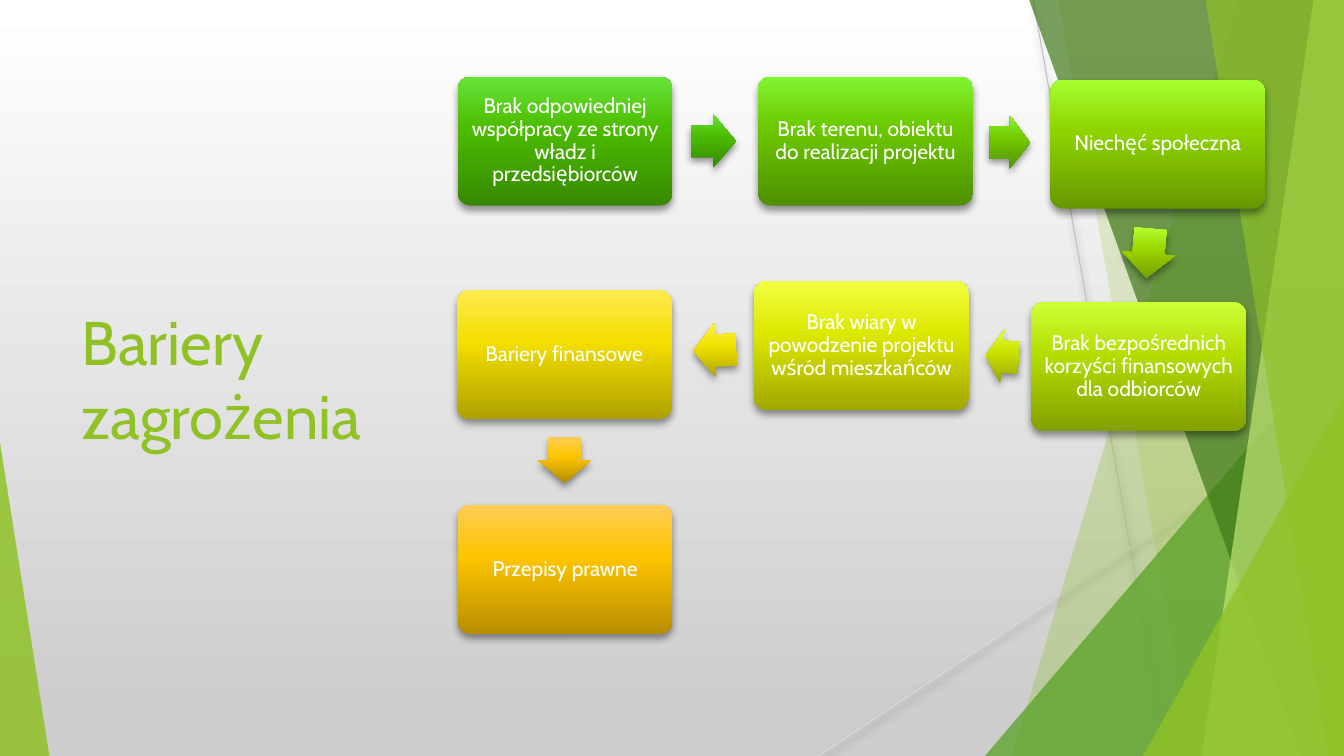
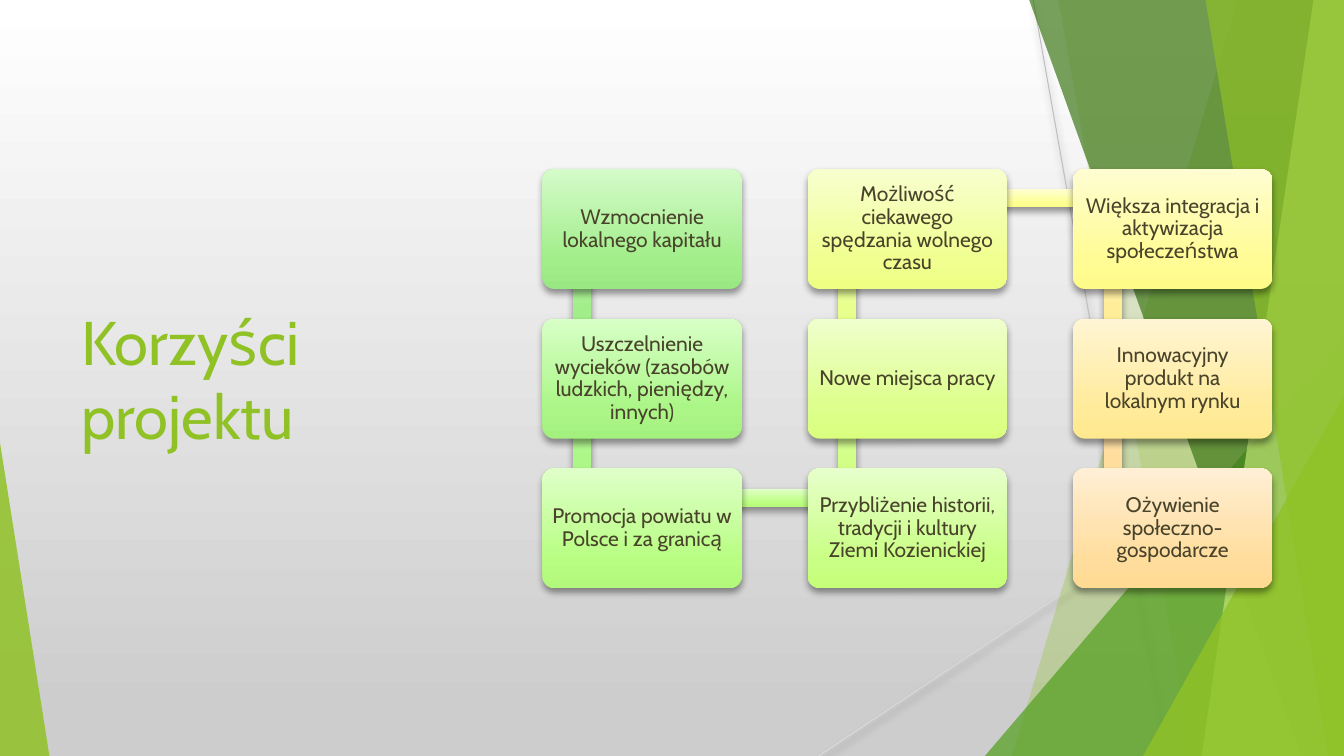
from dataclasses import dataclass
from itertools import pairwise
from math import atan2, cos, degrees, sin

from lxml.etree import SubElement
from pptx import Presentation
from pptx.dml.color import RGBColor as RGB
from pptx.enum.shapes import MSO_CONNECTOR as LINE, MSO_SHAPE as SHAPE
from pptx.enum.text import MSO_ANCHOR as ANCHOR, PP_ALIGN as ALIGN
from pptx.oxml.ns import qn
from pptx.util import Inches, Pt

W, H = Inches(13.333), Inches(7.5)


@dataclass(frozen=True)
class Theme:
    font: str = "Cabin"
    title_size: int = 44
    body_size: int = 15
    lime: str = "90C226"
    green: str = "54A021"
    forest: str = "3F7819"
    pale: str = "C0E474"
    white: str = "FFFFFF"
    brown: str = "48432A"
    silver: str = "CDCDCD"
    line_dark: str = "BFBFBF"
    line_light: str = "D9D9D9"
    shadow: str = "000000"
    deep_stops: tuple = (0, 60, 100)
    soft_stops: tuple = (0, 25, 100)


T = Theme()

BARRIERS = [
    ("Brak odpowiedniej współpracy ze strony władz i przedsiębiorców",
     34.05, 10.13, "378800 4CBC01 66E438"),
    ("Brak terenu, obiektu do realizacji projektu",
     56.4, 10.13, "4E9000 6CC800 81F431"),
    ("Niechęć społeczna", 78.15, 10.53, "679800 8ED300 A6FF2F"),
    ("Brak bezpośrednich korzyści finansowych dla odbiorców",
     76.73, 40, "82A000 B4DE00 CDFF39"),
    ("Brak wiary w powodzenie projektu wśród mieszkańców",
     56.1, 37.2, "A0A800 DDE800 F2FF43"),
    ("Bariery finansowe", 33.98, 38.4, "B0A000 F3DE00 FFEA4E"),
    ("Przepisy prawne", 34.05, 66.8, "B88E00 FEC500 FFCD56"),
]
ARROW_COLORS = [
    "378800 4CBC01 66E438", "539200 72CA00 87F730", "729B00 9DD700 B6FF33",
    "94A500 CCE400 E4FF3F", "AEA400 F1E300 FFF04C", "B88E00 FEC500 FFCD56",
]

BENEFITS = [
    ("Wzmocnienie lokalnego kapitału", "9AE883 A2EE8B D4FBC9"),
    ("Uszczelnienie wycieków (zasobów ludzkich, pieniędzy, innych)",
     "A4F07F ABF687 D8FFC7"),
    ("Promocja powiatu w Polsce i za granicą", "B2F87B B8FE83 DFFFC9"),
    ("Przybliżenie historii, tradycji i kultury Ziemi Kozienickiej",
     "C5FF79 CAFF86 E7FFCB"),
    ("Nowe miejsca pracy", "DAFF7E DDFF8B EFFFCD"),
    ("Możliwość ciekawego spędzania wolnego czasu", "EEFF84 F0FF90 F8FFCF"),
    ("Większa integracja i aktywizacja społeczeństwa",
     "FFFB89 FFFC95 FFFDD1"),
    ("Innowacyjny produkt na lokalnym rynku", "FFE98F FFEB9A FFF5D4"),
    ("Ożywienie społeczno-gospodarcze", "FFDA93 FFDD9D FFEFD5"),
]
BAR_COLORS = [
    "9AE883 A2EE8B D4FBC9", "A6F17F ACF787 D9FFC7", "B7FB7A BDFF83 E1FFC9",
    "CEFF7C D2FF88 EAFFCC", "E6FF81 E8FF8E F4FFCE", "FDFF88 FDFF93 FEFFD0",
    "FFEC8E FFED99 FFF7D3", "FFDA93 FFDD9D FFEFD5",
]


def x(share):
    return int(W * share / 100)


def y(share):
    return int(H * share / 100)


def area(left, top, width, height):
    return x(left), y(top), x(width), y(height)


def gradient(fill, root, colors, stops, angle):
    fill.gradient()
    fill.gradient_angle = angle
    grad = next(root.iter(qn("a:gradFill")))
    grad.set("rotWithShape", "0")
    gs_list = grad.find(qn("a:gsLst"))
    for gs in list(gs_list):
        gs_list.remove(gs)
    for color, stop in zip(colors, stops):
        gs = SubElement(gs_list, qn("a:gs"), pos=str(stop * 1000))
        SubElement(gs, qn("a:srgbClr"), val=color)


def drop_shadow(sp):
    spPr = sp.element.spPr
    effects = spPr.find(qn("a:effectLst"))
    if effects is None:
        effects = SubElement(spPr, qn("a:effectLst"))
    shadow = SubElement(effects, qn("a:outerShdw"), blurRad=str(Pt(5.2)),
                        dist=str(Pt(3)), dir="5400000", rotWithShape="0")
    color = SubElement(shadow, qn("a:srgbClr"), val=T.shadow)
    SubElement(color, qn("a:alpha"), val="40000")


def tint(sp, color, opacity):
    sp.fill.solid()
    sp.fill.fore_color.rgb = RGB.from_string(color)
    clr = next(sp.element.spPr.iter(qn("a:srgbClr")))
    SubElement(clr, qn("a:alpha"), val=str(opacity * 1000))
    sp.line.fill.background()
    sp.shadow.inherit = False


def glossy(s, kind, box, colors, stops, adjust=()):
    sp = s.shapes.add_shape(kind, *box)
    for i, value in enumerate(adjust):
        sp.adjustments[i] = value
    gradient(sp.fill, sp.element, colors.split(), stops, 90)
    sp.line.fill.background()
    sp.shadow.inherit = False
    drop_shadow(sp)
    return sp


def write(sp, text, size, color, align):
    tf = sp.text_frame
    tf.word_wrap = True
    tf.vertical_anchor = ANCHOR.MIDDLE
    p = tf.paragraphs[0]
    p.text = text
    p.alignment = align
    p.font.name = T.font
    p.font.size = Pt(size)
    p.font.color.rgb = RGB.from_string(color)
    return tf


def card(s, box, text, colors, stops, color):
    sp = glossy(s, SHAPE.ROUNDED_RECTANGLE, box, colors, stops, [0.1])
    tf = write(sp, text, T.body_size, color, ALIGN.CENTER)
    tf.margin_left = tf.margin_right = Inches(0.06)
    tf.margin_top = tf.margin_bottom = Inches(0.06)
    tf.paragraphs[0].line_spacing = 0.9


def title(s, text):
    sp = s.shapes.add_textbox(*area(5.33, 20.13, 29.1, 59.73))
    write(sp, text, T.title_size, T.lime, ALIGN.LEFT)


def hairline(s, start, end, color):
    ln = s.shapes.add_connector(LINE.STRAIGHT, x(start[0]), y(start[1]),
                                x(end[0]), y(end[1]))
    ln.line.color.rgb = RGB.from_string(color)
    ln.line.width = Pt(0.75)
    drop_shadow(ln)


def pane(s, top_left, bottom_left, color, opacity):
    fb = s.shapes.build_freeform(x(top_left), 0)
    fb.add_line_segments([(W, 0), (W, H), (x(bottom_left), H)])
    tint(fb.convert_to_shape(), color, opacity)


def wedge(s, left, top, width, apex, color, opacity):
    sp = s.shapes.add_shape(SHAPE.ISOSCELES_TRIANGLE,
                            *area(left, top, width, 100 - top))
    sp.adjustments[0] = apex
    tint(sp, color, opacity)


def backdrop(s):
    hairline(s, (76.88, 0), (86.85, 100), T.line_dark)
    hairline(s, (100, 53.73), (60.9, 100), T.line_light)
    pane(s, 92.1, 75.3, T.lime, 30)
    pane(s, 78.75, 88.73, T.lime, 20)
    wedge(s, 73.28, 44.4, 26.72, 1, T.green, 72)
    pane(s, 76.58, 96.83, T.forest, 70)
    pane(s, 97.73, 89.4, T.pale, 70)
    pane(s, 89.7, 98.85, T.lime, 65)
    wedge(s, 85.05, 52.4, 14.95, 1, T.lime, 80)
    wedge(s, 0, 58.53, 3.68, 0, T.lime, 85)


def dress_layout(layout, s):
    for ph in list(layout.placeholders):
        ph.element.getparent().remove(ph.element)
    gradient(layout.background.fill, layout.element,
             (T.white, T.silver), (0, 94), 270)
    backdrop(s)
    for sp in list(s.shapes):
        layout.shapes.element.append(sp.element)


def arrow(s, start, end, colors):
    left, top, width, height = start
    dx, dy = end[0] - left, end[1] - top
    turn = atan2(dy, dx)
    length = 0.53 * max(abs(dx) - width, abs(dy) - height)
    thick, pull = Inches(0.53), Inches(0.02)
    cx = left + (width + dx) / 2 - pull * cos(turn)
    cy = top + (height + dy) / 2 - pull * sin(turn)
    box = [int(v) for v in (cx - length / 2, cy - thick / 2, length, thick)]
    sp = glossy(s, SHAPE.RIGHT_ARROW, box, colors, T.deep_stops, [0.6, 0.5])
    sp.rotation = degrees(turn) % 360


def barriers(s):
    title(s, "Bariery zagrożenia")
    boxes = [area(left, top, 16, 17.07) for _, left, top, _ in BARRIERS]
    for box, (text, _, _, colors) in zip(boxes, BARRIERS):
        card(s, box, text, colors, T.deep_stops, T.white)
    for (start, end), colors in zip(pairwise(boxes), ARROW_COLORS):
        arrow(s, start, end, colors)


def snake(i, rows=3):
    col, step = divmod(i, rows)
    row = rows - 1 - step if col % 2 else step
    return 40.35 + 19.74 * col, 22.35 + 19.8 * row


def benefits(s):
    title(s, "Korzyści projektu")
    cells = [snake(i) for i in range(len(BENEFITS))]
    for ((left, top), (next_left, next_top)), colors in zip(
            pairwise(cells), BAR_COLORS):
        if left == next_left:
            box = area(left + 2.29, min(top, next_top) + 3.93, 1.35, 19.6)
        else:
            box = area(left + 3.08, top + 2.67, 19.65, 2.4)
        glossy(s, SHAPE.RECTANGLE, box, colors, T.soft_stops)
    for cell, (text, colors) in zip(cells, BENEFITS):
        card(s, area(*cell, 14.85, 15.87), text, colors, T.soft_stops,
             T.brown)


def main():
    prs = Presentation()
    prs.slide_width, prs.slide_height = W, H
    layout = prs.slide_layouts[6]
    slides = [prs.slides.add_slide(layout) for _ in range(2)]
    dress_layout(layout, slides[0])
    for s, build in zip(slides, (barriers, benefits)):
        build(s)
    prs.save("out.pptx")


if __name__ == "__main__":
    main()
